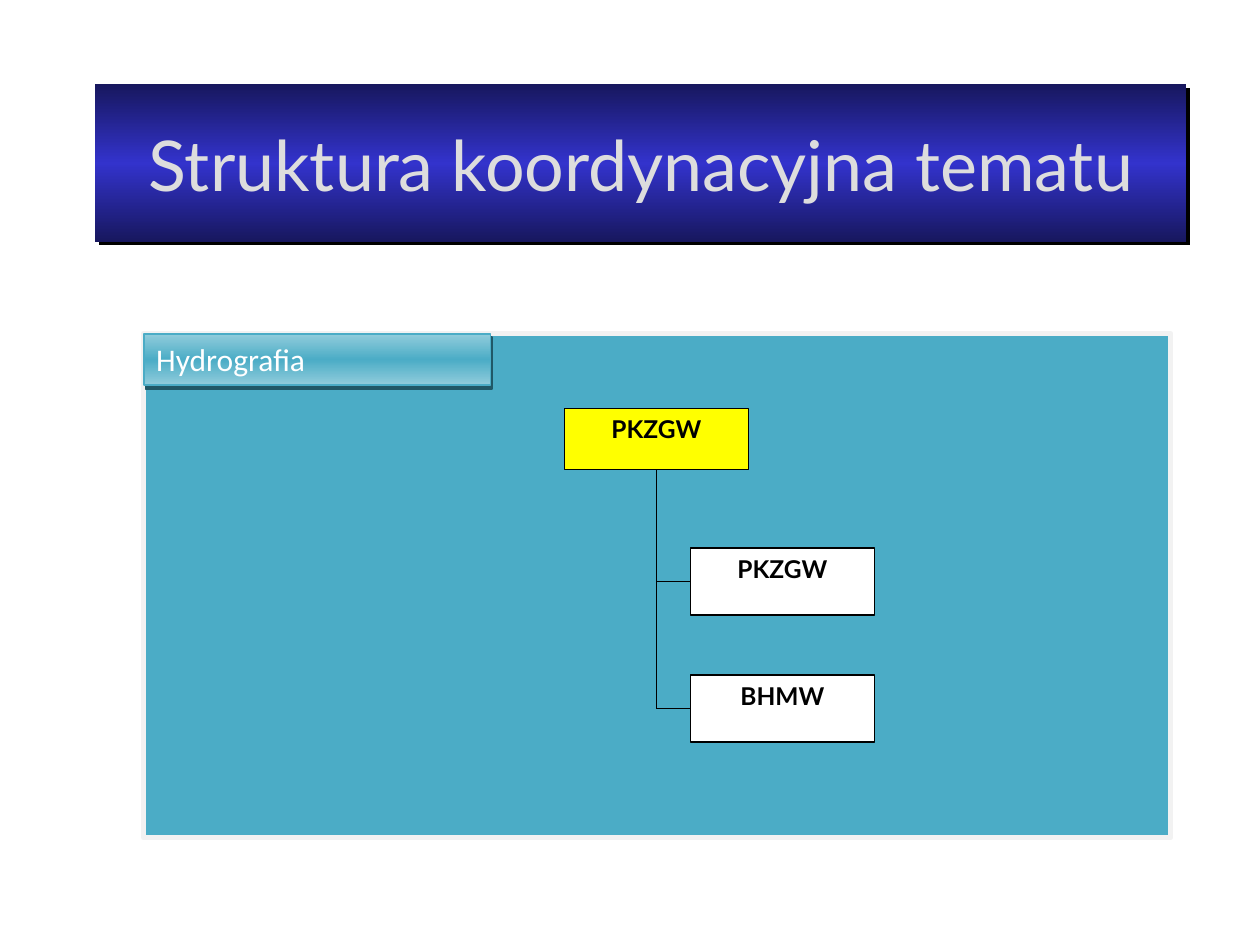
from copy import deepcopy

from lxml import etree
from pptx import Presentation
from pptx import util as u
from pptx.dml.color import RGBColor
from pptx.enum import shapes, text
from pptx.oxml import ns

BLACK, WHITE, YELLOW, TEAL = "000000", "FFFFFF", "FFFF00", "4BACC6"


def rgb(value):
    return RGBColor.from_string(value)


class Diagram:
    label = {"name": "Lato", "size": u.Pt(14), "bold": True}
    line_width = 0.75

    def __init__(self, slide):
        self.s = slide

    def box(self, left, top, width, height, fill, line=None, line_width=line_width):
        sp = self.s.shapes.add_shape(
            shapes.MSO_SHAPE.RECTANGLE, *map(u.Cm, (left, top, width, height)))
        if isinstance(fill, str):
            sp.fill.solid()
            sp.fill.fore_color.rgb = rgb(fill)
        else:
            self.gradient(sp, *fill)
        if line:
            sp.line.color.rgb = rgb(line)
            sp.line.width = u.Pt(line_width)
        else:
            sp.line.fill.background()
        sp.shadow.inherit = False
        return sp

    def gradient(self, sp, edge, middle):
        """Fill from edge to middle and back to edge, top to bottom."""
        sp.fill.gradient()
        sp.fill.gradient_angle = 90
        stops = sp._element.spPr.find(".//" + ns.qn("a:gsLst"))
        stops.append(deepcopy(stops[-1]))
        for stop, pos, color in zip(sp.fill.gradient_stops, (0, 0.5, 1), (edge, middle, edge)):
            stop.position = pos
            stop.color.rgb = rgb(color)

    def shadow(self, sp, color, distance, angle):
        effects = sp._element.spPr.find(ns.qn("a:effectLst"))
        shade = etree.SubElement(effects, ns.qn("a:outerShdw"), dist=str(u.Pt(distance)),
                                 dir=str(angle * 60000), algn="ctr", rotWithShape="0")
        etree.SubElement(shade, ns.qn("a:srgbClr"), val=color)

    def caption(self, sp, words, color, font, align="CENTER", anchor="TOP"):
        tf = sp.text_frame
        tf.word_wrap = True
        tf.vertical_anchor = text.MSO_ANCHOR[anchor]
        p = tf.paragraphs[0]
        p.alignment = text.PP_ALIGN[align]
        r = p.add_run()
        r.text = words
        r.font.color.rgb = rgb(color)
        for key, value in font.items():
            setattr(r.font, key, value)

    def unit(self, words, left, top, height, fill):
        sp = self.box(left, top, 3.71, height, fill, BLACK)
        self.caption(sp, words, BLACK, self.label)

    def line(self, x1, y1, x2, y2):
        c = self.s.shapes.add_connector(
            shapes.MSO_CONNECTOR.STRAIGHT, *map(u.Cm, (x1, y1, x2, y2)))
        c.line.color.rgb = rgb(BLACK)
        c.line.width = u.Pt(self.line_width)
        etree.SubElement(c._element.spPr, ns.qn("a:effectLst"))


def main():
    prs = Presentation()
    prs.slide_width, prs.slide_height = u.Cm(25.4), u.Cm(19.05)
    d = Diagram(prs.slides.add_slide(prs.slide_layouts[6]))

    title = d.box(1.92, 1.7, 22, 3.18, ("17175E", "3333CC"))
    d.shadow(title, BLACK, 2.8, 45)
    d.caption(title, "Struktura koordynacyjna tematu", "DDDDDD",
              {"name": "Lato", "size": u.Pt(40)}, anchor="MIDDLE")

    panel_left, panel_top = 2.9, 6.73
    d.box(panel_left, panel_top, 20.7, 10.16, TEAL, "F2F2F2", 3)

    trunk, child_left, child_height = 13.24, 13.92, 1.35
    children = {"PKZGW": 11.05, "BHMW": 13.61}
    d.unit("PKZGW", 11.38, 8.23, 1.24, YELLOW)
    for words, top in children.items():
        middle = top + child_height / 2
        d.unit(words, child_left, top, child_height, WHITE)
        d.line(trunk, middle, child_left, middle)
    d.line(trunk, 9.47, trunk, middle)

    tab = d.box(panel_left, panel_top, 6.99, 1.04, ("92CDDC", TEAL), TEAL, 1)
    d.shadow(tab, "205867", 2.2, 63)
    d.caption(tab, "Hydrografia", WHITE, {"name": "Calibri", "size": u.Pt(18)}, align="LEFT")

    prs.save("out.pptx")


if __name__ == "__main__":
    main()
